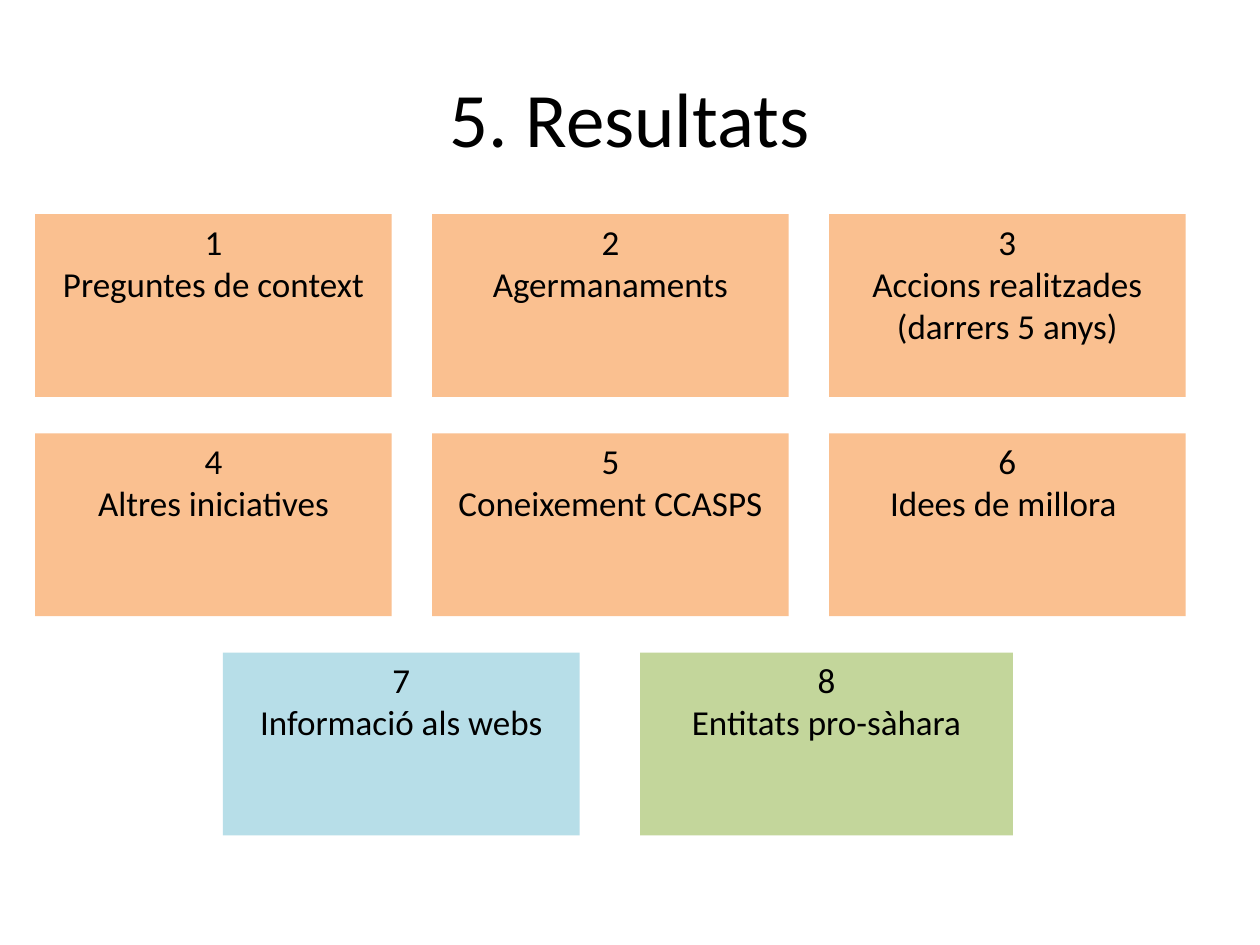
from pptx import Presentation
from pptx.dml.color import RGBColor
from pptx.enum.shapes import MSO_SHAPE as SHAPE
from pptx.enum.text import MSO_ANCHOR as ANCHOR, PP_ALIGN as ALIGN
from pptx.util import Inches, Pt

ORANGE, BLUE, GREEN = "FAC090", "B7DEE8", "C3D69B"
BOX_W, BOX_H = 2.83, 1.45
LEFT, TOP = 0.28, 1.7
COL_STEP, ROW_STEP = 3.15, 1.74

TOPICS = [
    "Preguntes de context",
    "Agermanaments",
    "Accions realitzades (darrers 5 anys)",
    "Altres iniciatives",
    "Coneixement CCASPS",
    "Idees de millora ",
]
# topic, left, width, fill
LAST_ROW = [
    ("Informació als webs", 1.77, BOX_W, BLUE),
    ("Entitats pro-sàhara", 5.08, 2.96, GREEN),
]


def rgb(value):
    return RGBColor.from_string(value)


class SlideBuilder:
    font = "Calibri"
    color = "000000"

    def __init__(self, slide):
        self.s = slide

    def set_text(self, tf, text, size, anchor):
        tf.word_wrap = True
        tf.vertical_anchor = anchor
        tf.text = text
        for p in tf.paragraphs:
            p.alignment = ALIGN.CENTER
            for r in p.runs:
                r.font.name = self.font
                r.font.size = Pt(size)
                r.font.color.rgb = rgb(self.color)

    def title(self, text, x, y, w, h):
        sp = self.s.shapes.add_textbox(Inches(x), Inches(y), Inches(w), Inches(h))
        self.set_text(sp.text_frame, text, 44, ANCHOR.MIDDLE)

    def box(self, number, topic, x, y, w, fill):
        sp = self.s.shapes.add_shape(
            SHAPE.RECTANGLE, Inches(x), Inches(y), Inches(w), Inches(BOX_H))
        sp.shadow.inherit = False
        sp.fill.solid()
        sp.fill.fore_color.rgb = rgb(fill)
        sp.line.fill.background()
        self.set_text(sp.text_frame, f"{number}\n{topic}", 20, ANCHOR.TOP)


def main():
    prs = Presentation()
    prs.slide_width, prs.slide_height = Inches(10), Inches(7.5)
    builder = SlideBuilder(prs.slides.add_slide(prs.slide_layouts[6]))

    builder.title("5. Resultats", 0.5, 0.3, 9, 1.25)
    for i, topic in enumerate(TOPICS):
        row, col = divmod(i, 3)
        builder.box(i + 1, topic, LEFT + col * COL_STEP, TOP + row * ROW_STEP,
                    BOX_W, ORANGE)
    for number, (topic, x, w, fill) in enumerate(LAST_ROW, len(TOPICS) + 1):
        builder.box(number, topic, x, TOP + 2 * ROW_STEP, w, fill)

    prs.save("out.pptx")


if __name__ == "__main__":
    main()
